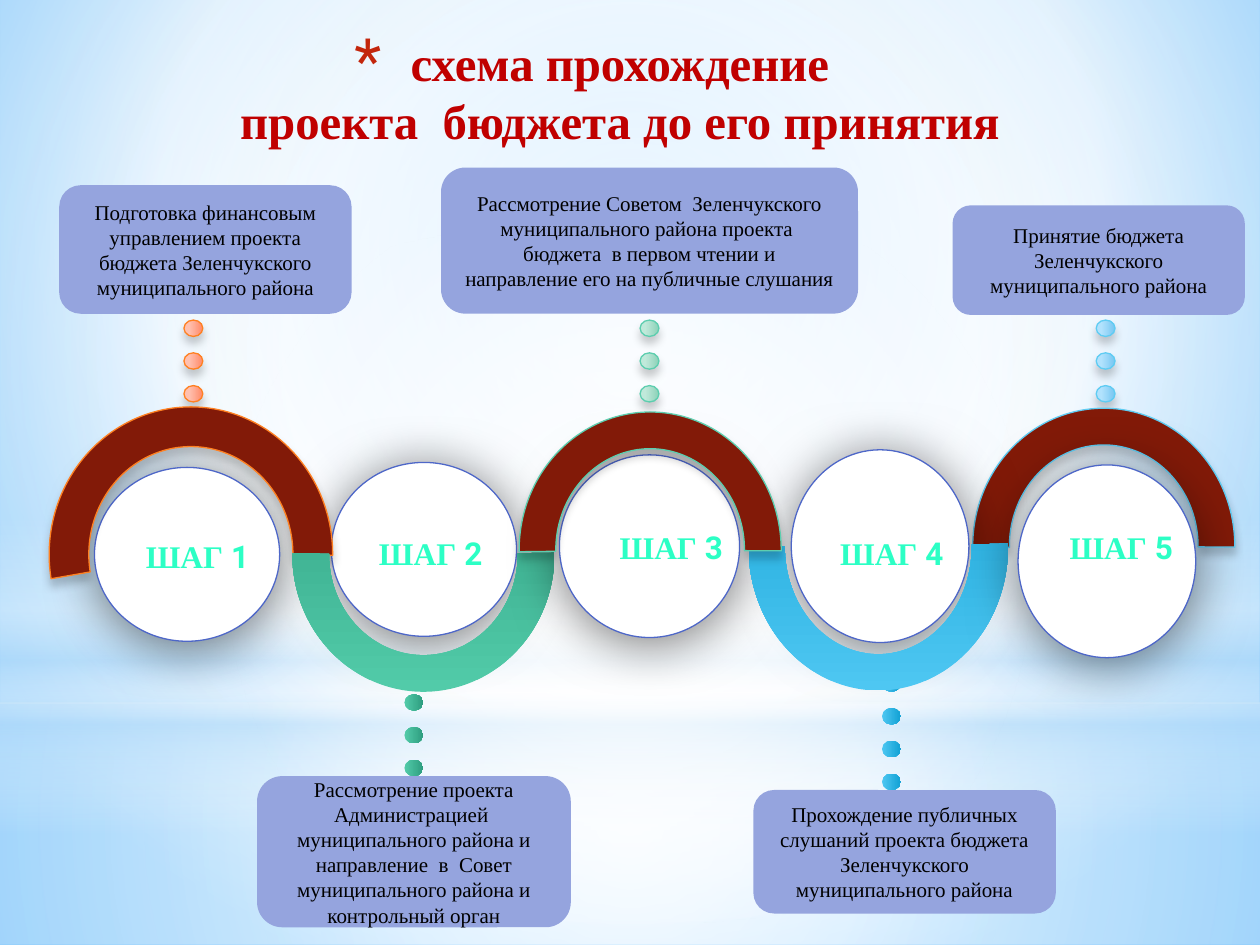
from dataclasses import dataclass

from lxml import etree
from pptx import Presentation
from pptx.dml.color import RGBColor
from pptx.enum.shapes import MSO_SHAPE
from pptx.enum.text import MSO_ANCHOR, PP_ALIGN
from pptx.oxml.ns import qn
from pptx.util import Inches, Pt

RECTANGLE, ELLIPSE = MSO_SHAPE.RECTANGLE, MSO_SHAPE.OVAL
ARC, CARD = MSO_SHAPE.BLOCK_ARC, MSO_SHAPE.ROUNDED_RECTANGLE
CENTER, MIDDLE = PP_ALIGN.CENTER, MSO_ANCHOR.MIDDLE


@dataclass(frozen=True)
class Theme:
    serif: str = "Times New Roman"
    sans: str = "Roboto"
    title_size: float = 27.9
    label_size: float = 18
    card_size: float = 12
    title: str = "C00000"
    bullet: str = "C3260C"
    card: str = "95A4DE"
    card_text: str = "000000"
    circle: str = "FFFFFF"
    circle_line: str = "4E67C8"
    arc: str = "821A08"
    orange: str = "FF8021"
    green: str = "5DCEAF"
    blue: str = "5ECCF3"
    label_line: str = "3CA185"
    label_stops: tuple = ((0, "068F69"), (43, "2CFFC5"), (48, "18FFC0"), (100, "068F69"))
    green_stops: tuple = ((0, "52CBA9"), (100, "2E9D7F"))
    blue_stops: tuple = ((0, "4EC7F2"), (100, "11A1D4"))
    pale_orange_stops: tuple = ((28, "FFC0AF"), (100, "FF8968"))
    pale_green_stops: tuple = ((28, "C0E9DA"), (100, "8CD1B8"))
    pale_blue_stops: tuple = ((28, "B1E2FD"), (100, "76C6F1"))
    soft_shadow: tuple = (20, 5, 4)  # opacity in percent, blur and distance in points
    deep_shadow: tuple = (52, 31, 3)


THEME = Theme()


def gradient(stops, focus=None):
    """Gradient fill element: circular around focus, otherwise from top to bottom."""
    fill = etree.Element(qn("a:gradFill"), rotWithShape="1")
    stop_list = etree.SubElement(fill, qn("a:gsLst"))
    for position, color, *opacity in stops:
        stop = etree.SubElement(stop_list, qn("a:gs"), pos=str(position * 1000))
        color_node = etree.SubElement(stop, qn("a:srgbClr"), val=color)
        if opacity:
            etree.SubElement(color_node, qn("a:alpha"), val=str(opacity[0] * 1000))
    if focus:
        circle = etree.SubElement(fill, qn("a:path"), path="circle")
        edges = {side: str(value * 1000) for side, value in zip("ltrb", focus)}
        etree.SubElement(circle, qn("a:fillToRect"), **edges)
    else:
        etree.SubElement(fill, qn("a:lin"), ang="5400000", scaled="0")
    return fill


def draw_shape(container, kind, box, fill, line=None, shadow=None, rotation=0):
    """Add a preset shape; fill is a colour or a gradient element."""
    shape = container.add_shape(kind, *map(Inches, box))
    shape.rotation = rotation
    shape.fill.solid()
    if isinstance(fill, str):
        shape.fill.fore_color.rgb = RGBColor.from_string(fill)
    else:
        properties = shape.element.spPr
        properties.replace(properties.find(qn("a:solidFill")), fill)
    if line:
        shape.line.color.rgb = RGBColor.from_string(line)
        shape.line.width = Pt(0.75)
    else:
        shape.line.fill.background()
    shape.shadow.inherit = False
    if shadow:
        opacity, blur, distance = shadow
        effects = shape.element.spPr.find(qn("a:effectLst"))
        outer = etree.SubElement(effects, qn("a:outerShdw"), blurRad=str(Pt(blur)),
                                 dist=str(Pt(distance)), dir="5400000", rotWithShape="0")
        color_node = etree.SubElement(outer, qn("a:srgbClr"), val="000000")
        etree.SubElement(color_node, qn("a:alpha"), val=str(opacity * 1000))
    return shape


presentation = Presentation()
presentation.slide_width, presentation.slide_height = Inches(10), Inches(7.5)
slide = presentation.slides.add_slide(presentation.slide_layouts[6])
shapes = slide.shapes

# Background
slide.background.fill.solid()
background = slide.element.find(".//" + qn("p:bgPr"))
background.replace(background.find(qn("a:solidFill")), gradient(
    [(0, "9ED5FF"), (60, "FFFFFF"), (100, "5BB9FF")], (20, 10, 20, 60)))
middle = (50, 50, 50, 50)
backdrop = [
    (RECTANGLE, (0, 5.58, 10, 1.92), middle,
     [(0, "FFFFFF", 91), (37, "FFFFFF", 76), (100, "B4DCFA", 79)]),
    (RECTANGLE, (0, 0, 10, 5.58), middle,
     [(0, "FFFFFF", 89), (48, "FFFFFF", 62), (100, "B4DCFA", 79)]),
    (RECTANGLE, (0, 4.12, 10, 2.5), None,
     [(0, "FFFFFF", 0), (29, "FFFFFF", 30), (45, "B4DCFA", 40),
      (55, "FFFFFF", 26), (65, "B4DCFA", 60), (100, "FFFFFF", 0)]),
    (ELLIPSE, (0, 1.75, 10, 5.58), middle, [(0, "FFFFFF"), (56, "FFFFFF", 0)]),
]
for kind, box, focus, stops in backdrop:
    draw_shape(shapes, kind, box, gradient(stops, focus))

# Dotted links between the arcs and the cards
dot_columns = [
    (1.47, 2.53, 3, THEME.pale_orange_stops, THEME.orange),
    (5.09, 2.53, 3, THEME.pale_green_stops, THEME.green),
    (8.71, 2.53, 3, THEME.pale_blue_stops, THEME.blue),
    (3.22, 5.5, 3, THEME.green_stops, None),
    (7.01, 5.35, 4, THEME.blue_stops, None),
]
for left, top, count, stops, line in dot_columns:
    group = shapes.add_group_shape()
    for index in range(count):
        draw_shape(group.shapes, ELLIPSE, (left, top + 0.26 * index, 0.13, 0.15),
                   gradient(stops), line, THEME.soft_shadow if line else None, 270)

# Wave of circles and arcs, from back to front; an arc has stops when it opens upwards
wave = [
    (ELLIPSE, (2.63, 3.67, 1.47, 1.38), None, None, None),
    (ELLIPSE, (0.75, 3.71, 1.47, 1.38), None, None, None),
    (ARC, (0.39, 3.23, 2.25, 2.34), 102.06, THEME.orange, None),
    (ARC, (2.32, 3.31, 2.08, 2.18), 107.54, None, THEME.green_stops),
    (ELLIPSE, (4.44, 3.61, 1.43, 1.45), None, None, None),
    (ARC, (7.72, 3.24, 2.08, 2.19), 107.54, THEME.blue, None),
    (ELLIPSE, (6.28, 3.57, 1.41, 1.53), None, None, None),
    (ARC, (5.94, 3.2, 2.06, 2.28), 107.12, None, THEME.blue_stops),
    (ELLIPSE, (8.08, 3.69, 1.41, 1.53), None, None, None),
    (ARC, (4.12, 3.27, 2.08, 2.19), 107.54, THEME.green, None),
]
for kind, box, start, line, stops in wave:
    if kind == ELLIPSE:
        draw_shape(shapes, kind, box, THEME.circle, THEME.circle_line, THEME.deep_shadow)
        continue
    if stops:
        arc = draw_shape(shapes, kind, box, gradient(stops), rotation=180)
    else:
        arc = draw_shape(shapes, kind, box, THEME.arc, line, THEME.soft_shadow)
    for index, value in enumerate((start, 0.23, 0.14)):
        arc.adjustments[index] = value

# Cards
cards = [
    ((0.47, 1.47, 2.32, 1.02),
     "Подготовка финансовым управлением проекта бюджета Зеленчукского\n"
     "муниципального района"),
    ((3.5, 1.33, 3.31, 1.16),
     "Рассмотрение Советом  Зеленчукского муниципального района проекта  бюджета  "
     "в первом чтении и\nнаправление его на публичные слушания"),
    ((2.04, 6.16, 2.49, 1.2),
     "Рассмотрение проекта Администрацией  муниципального района и направление  в  "
     "Совет муниципального района и контрольный орган"),
    ((5.98, 6.27, 2.4, 0.98),
     "Прохождение публичных слушаний проекта бюджета Зеленчукского муниципального района"),
    ((7.56, 1.63, 2.32, 0.87), "Принятие бюджета Зеленчукского муниципального района"),
]
for box, text in cards:
    text_frame = draw_shape(shapes, CARD, box, THEME.card).text_frame
    text_frame.word_wrap, text_frame.vertical_anchor = True, MIDDLE
    text_frame.text = text
    for paragraph in text_frame.paragraphs:
        paragraph.alignment = CENTER
        font = paragraph.runs[0].font
        font.name, font.size = THEME.serif, Pt(THEME.card_size)
        font.color.rgb = RGBColor.from_string(THEME.card_text)

# Step labels
label_places = [(1.06, 4.21), (2.91, 4.19), (4.82, 4.14), (6.57, 4.19), (8.39, 4.14)]
for number, (left, top) in enumerate(label_places, 1):
    label = shapes.add_textbox(*map(Inches, (left, top, 1.03, 0.4)))
    label.text_frame.word_wrap = False
    paragraph = label.text_frame.paragraphs[0]
    for text, typeface in (("ШАГ ", THEME.serif), (str(number), THEME.sans)):
        run = paragraph.add_run()
        run.text = text
        run.font.name, run.font.size, run.font.bold = typeface, Pt(THEME.label_size), True
        run.font.fill.solid()
        properties = run.font.fill._xPr
        properties.replace(properties.find(qn("a:solidFill")), gradient(THEME.label_stops))
        outline = etree.Element(qn("a:ln"), w=str(Pt(0.71)))
        outline_fill = etree.SubElement(outline, qn("a:solidFill"))
        etree.SubElement(outline_fill, qn("a:srgbClr"), val=THEME.label_line)
        properties.insert(0, outline)

# Title
title = shapes.add_textbox(*map(Inches, (0.39, 0.21, 8.71, 0.94)))
title.text_frame.word_wrap = True
paragraph = title.text_frame.paragraphs[0]
paragraph.text = " схема прохождение \vпроекта  бюджета до его принятия"
paragraph.alignment = CENTER
for run in paragraph.runs:
    run.font.name, run.font.size, run.font.bold = THEME.serif, Pt(THEME.title_size), True
    run.font.color.rgb = RGBColor.from_string(THEME.title)
properties = paragraph._p.get_or_add_pPr()
properties.set("marL", str(Inches(0.35)))
properties.set("indent", str(Inches(-0.35)))
bullet_color = etree.SubElement(properties, qn("a:buClr"))
etree.SubElement(bullet_color, qn("a:srgbClr"), val=THEME.bullet)
etree.SubElement(properties, qn("a:buSzPct"), val="128000")
etree.SubElement(properties, qn("a:buFont"), typeface=THEME.sans)
etree.SubElement(properties, qn("a:buChar"), char="*")

presentation.save("out.pptx")
